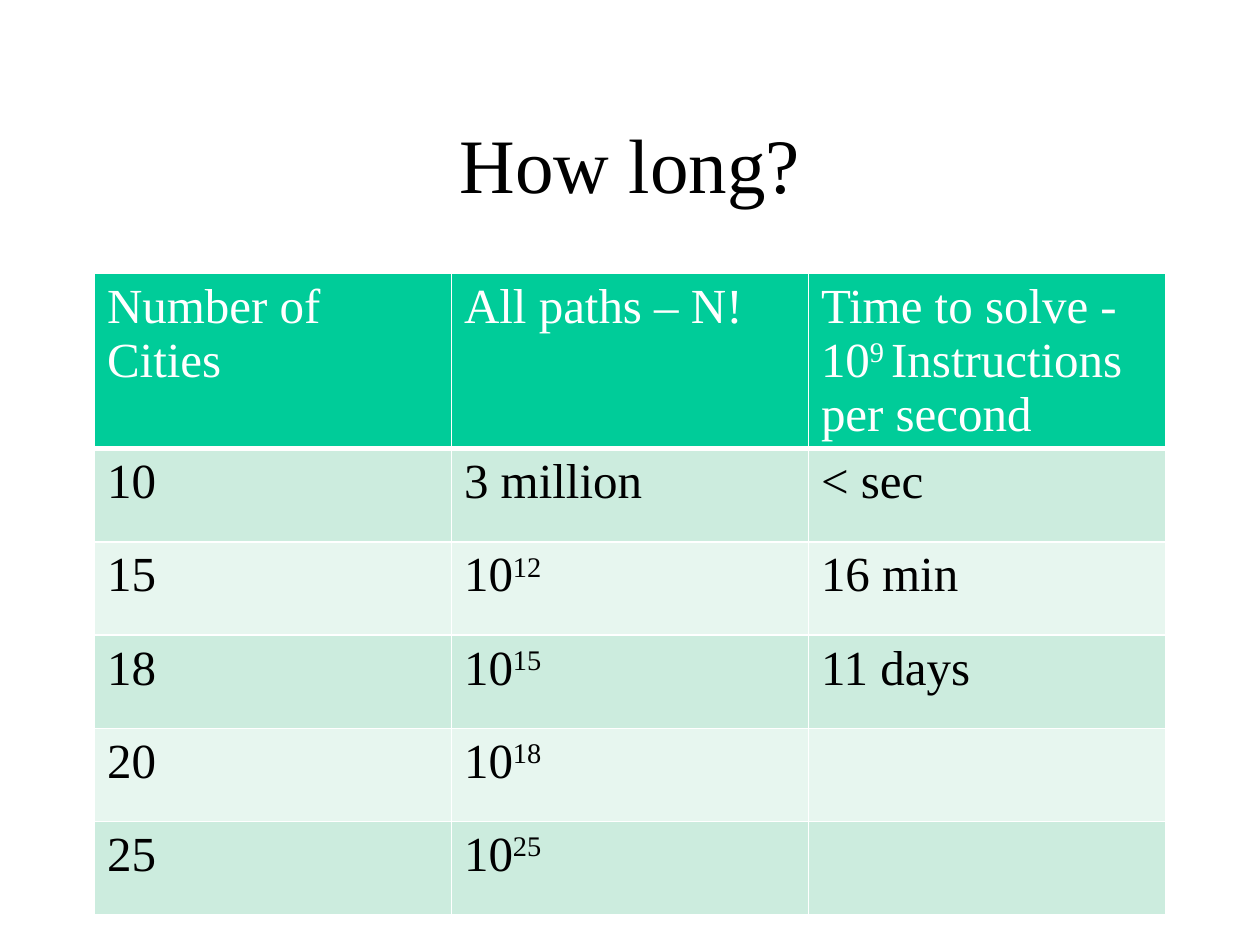
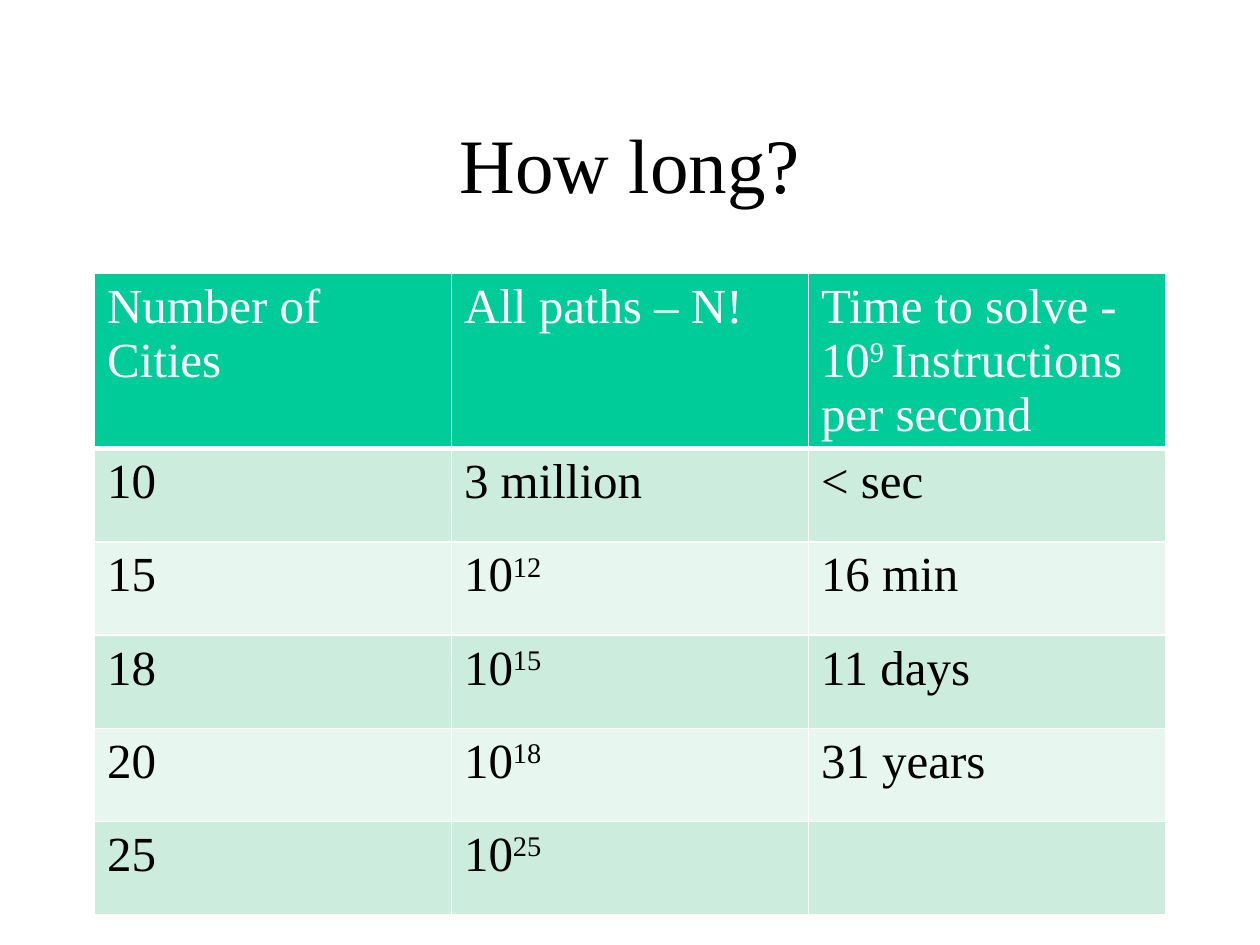
from lxml import etree
from pptx import Presentation
from pptx import util as u
from pptx.dml.color import RGBColor
from pptx.enum import text
from pptx.oxml import ns

# Shared style
WHITE, BLACK = "FFFFFF", "000000"
HEADER_FILL = "00CC99"
BAND_FILLS = ["E7F6EF", "CCECDE"]
TITLE_FONT = {"name": "Times New Roman", "size": u.Pt(44), "bold": False}
CELL_FONT = {"name": "Times New Roman", "size": u.Pt(28), "bold": False}

# Table contents: text between ^ marks is superscript, a newline starts a paragraph
HEADER = ["Number of Cities", "All paths – N!",
          "Time to solve -\n10^9 ^Instructions per second"]
CITIES = ["10", "15", "18", "20", "25"]
PATHS = ["3 million", "10^12^", "10^15^", "10^18^", "10^25^"]
TIMES_BY_PAGE = [
    ["< sec", "16 min", "11 days", "", ""],
    ["< sec", "16 min", "11 days", "31 years", ""],
]


def write(para, marked_text, font_values, colour):
    """Add runs to a paragraph, raising every second part between ^ marks."""
    for index, part in enumerate(marked_text.split("^")):
        if not part:
            continue
        span = para.add_run()
        span.text = part
        for name, value in font_values.items():
            setattr(span.font, name, value)
        span.font.color.rgb = RGBColor.from_string(colour)
        if index % 2:
            span._r.get_or_add_rPr().set("baseline", "30000")


def add_borders(cell, bottom_points):
    """Draw white lines on all four sides of a cell."""
    properties = cell._tc.get_or_add_tcPr()
    widths = {"lnL": 1, "lnR": 1, "lnT": 1, "lnB": bottom_points}
    for index, (side, points) in enumerate(widths.items()):
        line = etree.Element(ns.qn(f"a:{side}"), w=str(u.Pt(points)))
        fill = etree.SubElement(line, ns.qn("a:solidFill"))
        etree.SubElement(fill, ns.qn("a:srgbClr"), val=WHITE)
        properties.insert(index, line)


deck = Presentation()
deck.slide_width, deck.slide_height = u.Inches(10), u.Inches(7.5)
title_only = deck.slide_layouts[5]

for times in TIMES_BY_PAGE:
    page = deck.slides.add_slide(title_only)

    # Title
    title = page.shapes.title
    title.left, title.top = u.Inches(0.75), u.Inches(0.67)
    title.width, title.height = u.Inches(8.5), u.Inches(1.25)
    title.text_frame.vertical_anchor = text.MSO_ANCHOR.MIDDLE
    title_para = title.text_frame.paragraphs[0]
    title_para.alignment = text.PP_ALIGN.CENTER
    write(title_para, "How long?", TITLE_FONT, BLACK)

    # Running times table
    rows = [HEADER, *zip(CITIES, PATHS, times)]
    table_frame = page.shapes.add_table(
        len(rows), len(HEADER),
        u.Inches(0.75), u.Inches(2.17), u.Inches(8.5), u.Inches(5.18))
    table = table_frame.table
    for row_index, row in enumerate(rows):
        table.rows[row_index].height = u.Inches(0.74)
        is_header = row_index == 0
        fill_colour = HEADER_FILL if is_header else BAND_FILLS[row_index % 2]
        for column_index, cell_text in enumerate(row):
            cell = table.cell(row_index, column_index)
            cell.fill.solid()
            cell.fill.fore_color.rgb = RGBColor.from_string(fill_colour)
            add_borders(cell, 3 if is_header else 1)
            for line_index, line_text in enumerate(cell_text.split("\n")):
                frame = cell.text_frame
                para = frame.add_paragraph() if line_index else frame.paragraphs[0]
                write(para, line_text, CELL_FONT, WHITE if is_header else BLACK)
    table_frame.height = u.Inches(5.18)

    # Body rows start with the darker band
    for row_index in range(1, len(rows)):
        for cell in table.rows[row_index].cells:
            cell.fill.fore_color.rgb = RGBColor.from_string(BAND_FILLS[row_index % 2])

deck.save("out.pptx")
